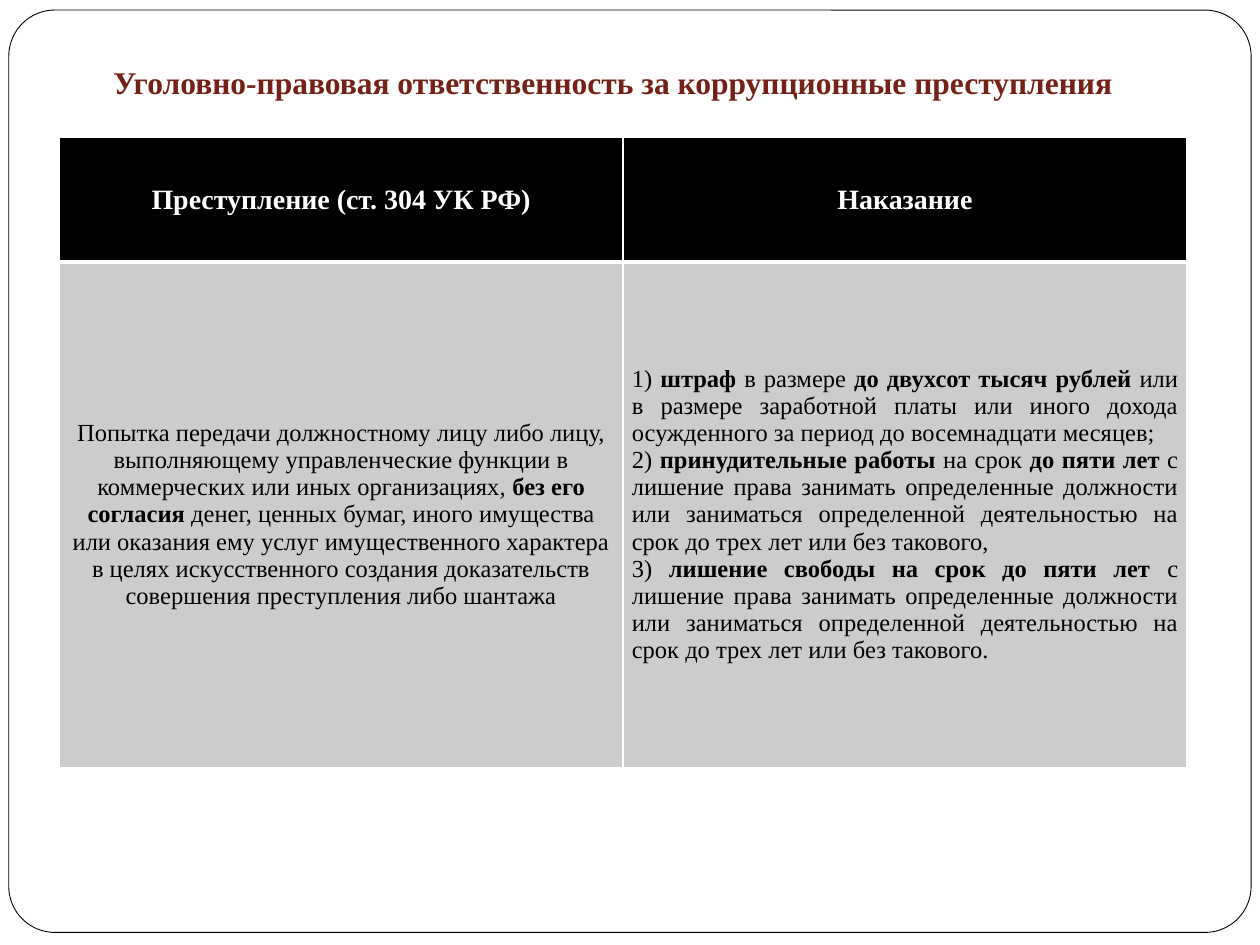
from lxml.etree import SubElement
from pptx import Presentation
from pptx.dml.color import RGBColor
from pptx.enum.shapes import MSO_SHAPE
from pptx.enum.text import MSO_ANCHOR, MSO_AUTO_SIZE, PP_ALIGN
from pptx.oxml.ns import qn
from pptx.util import Inches, Pt

FONT = "Times New Roman"
BLACK = RGBColor(0x00, 0x00, 0x00)
WHITE = RGBColor(0xFF, 0xFF, 0xFF)
GREY = RGBColor(0xCC, 0xCC, 0xCC)
MAROON = RGBColor(0x74, 0x22, 0x17)

TITLE = "Уголовно-правовая ответственность за коррупционные преступления"
HEADERS = ["Преступление (ст. 304 УК РФ)", "Наказание"]
BAN = "с лишение права занимать определенные должности или заниматься определенной деятельностью на срок до трех лет или без такового"
CRIME = [[
    ("Попытка передачи должностному лицу либо лицу, выполняющему управленческие функции в коммерческих или иных организациях, ", False),
    ("без его согласия", True),
    (" денег, ценных бумаг, иного имущества или оказания ему услуг имущественного характера в целях искусственного создания доказательств совершения преступления либо шантажа", False),
]]
PENALTIES = [
    [("1) ", False), ("штраф ", True), ("в размере ", False), ("до двухсот тысяч рублей ", True),
     ("или в размере заработной платы или иного дохода осужденного за период до восемнадцати месяцев; ", False)],
    [("2) ", False), ("принудительные работы", True), (" на срок ", False), ("до пяти лет", True),
     (f" {BAN},", False)],
    [("3) ", False), ("лишение свободы на срок до пяти лет ", True), (f"{BAN}.", False)],
]


def style_paragraph(paragraph, size, color, alignment):
    """Set the font and alignment of a whole paragraph."""
    paragraph.alignment = alignment
    paragraph.font.name = FONT
    paragraph.font.size = Pt(size)
    paragraph.font.color.rgb = color


def style_cell(cell, fill, bottom_width):
    """Give a cell white borders, a solid fill and middle anchoring."""
    properties = cell._tc.get_or_add_tcPr()
    for side, width in (("L", 1), ("R", 1), ("T", 1), ("B", bottom_width)):
        line = SubElement(properties, qn(f"a:ln{side}"), w=str(Pt(width)))
        solid = SubElement(line, qn("a:solidFill"))
        SubElement(solid, qn("a:srgbClr"), val=str(WHITE))
    cell.fill.solid()
    cell.fill.fore_color.rgb = fill
    cell.vertical_anchor = MSO_ANCHOR.MIDDLE


def fill_header(cell, text):
    """Write a bold white heading on black."""
    style_cell(cell, BLACK, 3)
    cell.text = text
    paragraph = cell.text_frame.paragraphs[0]
    style_paragraph(paragraph, 16, WHITE, PP_ALIGN.CENTER)
    paragraph.font.bold = True


def fill_body(cell, paragraphs, alignment):
    """Write paragraphs of plain and bold runs on grey."""
    style_cell(cell, GREY, 1)
    cell.margin_left = cell.margin_right = Inches(0.07)
    cell.margin_top = cell.margin_bottom = 0
    frame = cell.text_frame
    for index, runs in enumerate(paragraphs):
        paragraph = frame.add_paragraph() if index else frame.paragraphs[0]
        style_paragraph(paragraph, 14, BLACK, alignment)
        for text, bold in runs:
            run = paragraph.add_run()
            run.text = text
            run.font.bold = bold


def add_frame(slide, left, top, width, height):
    """Draw the rounded page frame behind the title."""
    frame = slide.shapes.add_shape(MSO_SHAPE.ROUNDED_RECTANGLE, left, top, width, height)
    frame.adjustments[0] = 0.05
    frame.shadow.inherit = False
    frame.fill.solid()
    frame.fill.fore_color.rgb = WHITE
    frame.line.color.rgb = BLACK
    frame.line.width = Pt(0.5)
    slide.shapes.title.element.addprevious(frame.element)


def place_title(slide, left, top, width, height):
    """Move and format the title placeholder."""
    title = slide.shapes.title
    title.left, title.top, title.width, title.height = left, top, width, height
    title.text = TITLE
    text_frame = title.text_frame
    text_frame.auto_size = MSO_AUTO_SIZE.NONE
    text_frame.vertical_anchor = MSO_ANCHOR.BOTTOM
    text_frame.margin_bottom = Inches(0.1)
    paragraph = text_frame.paragraphs[0]
    style_paragraph(paragraph, 18, MAROON, PP_ALIGN.CENTER)
    paragraph.font.bold = True


def add_penalty_table(slide, left, top, width, height):
    """Add the table of the crime and its punishments."""
    table = slide.shapes.add_table(2, 2, left, top, width, height).table
    table.rows[0].height = Inches(0.99)
    table.rows[1].height = height - Inches(0.99)
    for column, text in enumerate(HEADERS):
        fill_header(table.cell(0, column), text)
    fill_body(table.cell(1, 0), CRIME, PP_ALIGN.CENTER)
    fill_body(table.cell(1, 1), PENALTIES, PP_ALIGN.JUSTIFY)


def main():
    """Build and save the presentation."""
    presentation = Presentation()
    presentation.slide_width = Inches(10)
    presentation.slide_height = Inches(7.5)
    slide = presentation.slides.add_slide(presentation.slide_layouts[5])
    add_frame(slide, Inches(0.07), Inches(0.08), Inches(9.86), Inches(7.32))
    place_title(slide, Inches(0.39), Inches(0.39), Inches(8.95), Inches(0.51))
    add_penalty_table(slide, Inches(0.47), Inches(1.09), Inches(8.95), Inches(5))
    presentation.save("out.pptx")


if __name__ == "__main__":
    main()
